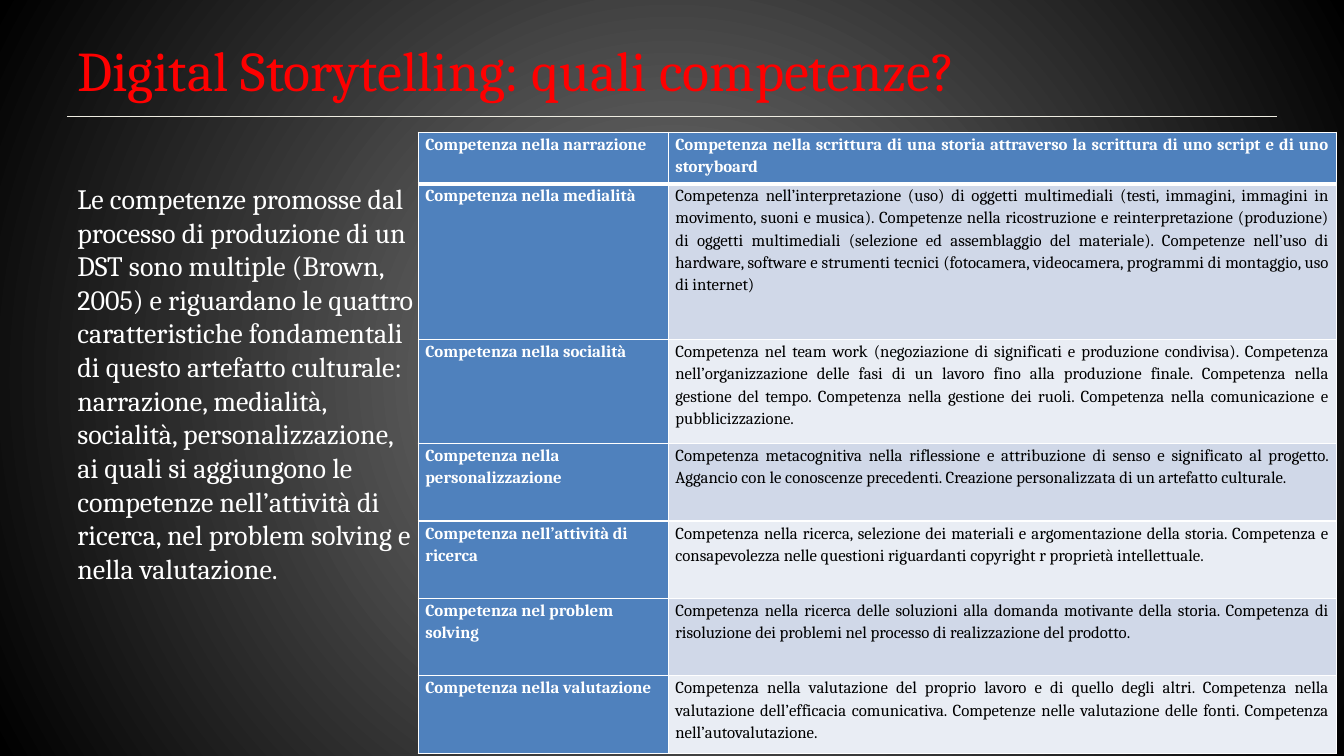
from lxml import etree
from pptx import Presentation
from pptx import util as u
from pptx.dml.color import RGBColor
from pptx.enum import shapes, text
from pptx.oxml.ns import qn

WHITE, BLUE = "FFFFFF", "4F81BD"
BANDS = ["E9EDF4", "D0D8E8"]


def rgb(color):
    return RGBColor.from_string(color)


def write(tf, words, size, color, bold=False, align=text.PP_ALIGN.LEFT,
          spacing=None, anchor=text.MSO_ANCHOR.TOP):
    tf.word_wrap = True
    tf.vertical_anchor = anchor
    p = tf.paragraphs[0]
    p.alignment = align
    p.line_spacing = spacing
    r = p.add_run()
    r.text = words
    r.font.name = "Cambria"
    r.font.size = u.Pt(size)
    r.font.bold = bold
    r.font.color.rgb = rgb(color)


prs = Presentation()
prs.slide_width, prs.slide_height = u.Cm(33.87), u.Cm(19.05)
s = prs.slides.add_slide(prs.slide_layouts[6])

# Radial background, light at the centre
fill = s.background.fill
fill.gradient()
for stop, color, position in zip(fill.gradient_stops, ["7F7F7F", "000000"], [0, 1]):
    stop.color.rgb = rgb(color)
    stop.position = position
grad = s.element.find(".//" + qn("a:gradFill"))
grad.remove(grad.find(qn("a:lin")))
radial = etree.SubElement(grad, qn("a:path"), path="circle")
etree.SubElement(radial, qn("a:fillToRect"), l="50000", t="50000", r="50000", b="50000")

# Title with its rule
rule = s.shapes.add_connector(shapes.MSO_CONNECTOR.STRAIGHT,
                              u.Cm(1.7), u.Cm(2.93), u.Cm(32.18), u.Cm(2.93))
rule.line.color.rgb = rgb("EEECE1")
rule.line.width = u.Pt(0.75)
etree.SubElement(rule.element.spPr, qn("a:effectLst"))

title = s.shapes.add_textbox(u.Cm(1.7), u.Cm(0.76), u.Cm(30.48), u.Cm(1.96))
write(title.text_frame, "Digital Storytelling: quali competenze?", 40, "FF0000",
      anchor=text.MSO_ANCHOR.MIDDLE)

intro = s.shapes.add_textbox(u.Cm(1.7), u.Cm(4.45), u.Cm(9.04), u.Cm(12.57))
write(intro.text_frame,
      "Le competenze promosse dal processo di produzione di un DST sono multiple "
      "(Brown, 2005) e riguardano le quattro caratteristiche fondamentali di questo "
      "artefatto culturale: narrazione, medialità, socialità, personalizzazione, ai "
      "quali si aggiungono le competenze nell’attività di ricerca, nel problem solving "
      "e nella valutazione.", 20, WHITE)

# Table of skills: row height, skill, description
skills = [
    (1.3, "Competenza nella narrazione",
     "Competenza nella scrittura di una storia attraverso la scrittura di uno script "
     "e di uno storyboard"),
    (3.93, "Competenza nella medialità",
     "Competenza nell’interpretazione (uso) di oggetti multimediali (testi, immagini, "
     "immagini in movimento, suoni e musica). Competenze nella ricostruzione e "
     "reinterpretazione (produzione) di oggetti multimediali (selezione ed assemblaggio "
     "del materiale). Competenze nell’uso di hardware, software e strumenti tecnici "
     "(fotocamera, videocamera, programmi di montaggio, uso di internet)"),
    (2.62, "Competenza nella socialità",
     "Competenza nel team work (negoziazione di significati e produzione condivisa). "
     "Competenza nell’organizzazione delle fasi di un lavoro fino alla produzione finale. "
     "Competenza nella gestione del tempo. Competenza nella gestione dei ruoli. "
     "Competenza nella comunicazione e pubblicizzazione."),
    (1.95, "Competenza nella personalizzazione",
     "Competenza metacognitiva nella riflessione e attribuzione di senso e significato "
     "al progetto. Aggancio con le conoscenze precedenti. Creazione personalizzata di un "
     "artefatto culturale."),
    (1.95, "Competenza nell’attività di ricerca",
     "Competenza nella ricerca, selezione dei materiali e argomentazione della storia. "
     "Competenza e consapevolezza nelle questioni riguardanti copyright r proprietà "
     "intellettuale."),
    (1.95, "Competenza nel problem solving",
     "Competenza nella ricerca delle soluzioni alla domanda motivante della storia. "
     "Competenza di risoluzione dei problemi nel processo di realizzazione del prodotto."),
    (1.95, "Competenza nella valutazione",
     "Competenza nella valutazione del proprio lavoro e di quello degli altri. Competenza "
     "nella valutazione dell’efficacia comunicativa. Competenze nelle valutazione delle "
     "fonti. Competenza nell’autovalutazione."),
]
table = s.shapes.add_table(len(skills), 2, u.Cm(10.54), u.Cm(3.33),
                           u.Cm(23.14), u.Cm(15.65)).table
table.columns[0].width, table.columns[1].width = u.Cm(6.3), u.Cm(16.84)

for i, (height, *words) in enumerate(skills):
    table.rows[i].height = u.Cm(height)
    for j, content in enumerate(words):
        cell = table.cell(i, j)
        heading = i == 0 or j == 0
        cell.margin_left = cell.margin_right = u.Cm(0.18)
        cell.margin_top = cell.margin_bottom = 0
        thick = {0: "a:lnB", 1: "a:lnT"}.get(i)
        for side in ["a:lnL", "a:lnR", "a:lnT", "a:lnB"]:
            width = u.Pt(3 if side == thick else 1)
            ln = etree.SubElement(cell._tc.get_or_add_tcPr(), qn(side), w=str(int(width)))
            solid = etree.SubElement(ln, qn("a:solidFill"))
            etree.SubElement(solid, qn("a:srgbClr"), val=WHITE)
        cell.fill.solid()
        cell.fill.fore_color.rgb = rgb(BLUE if heading else BANDS[i % 2])
        write(cell.text_frame, content, 12, WHITE if heading else "000000", bold=heading,
              align=text.PP_ALIGN.JUSTIFY if j else text.PP_ALIGN.LEFT, spacing=1.15)

prs.save("out.pptx")
